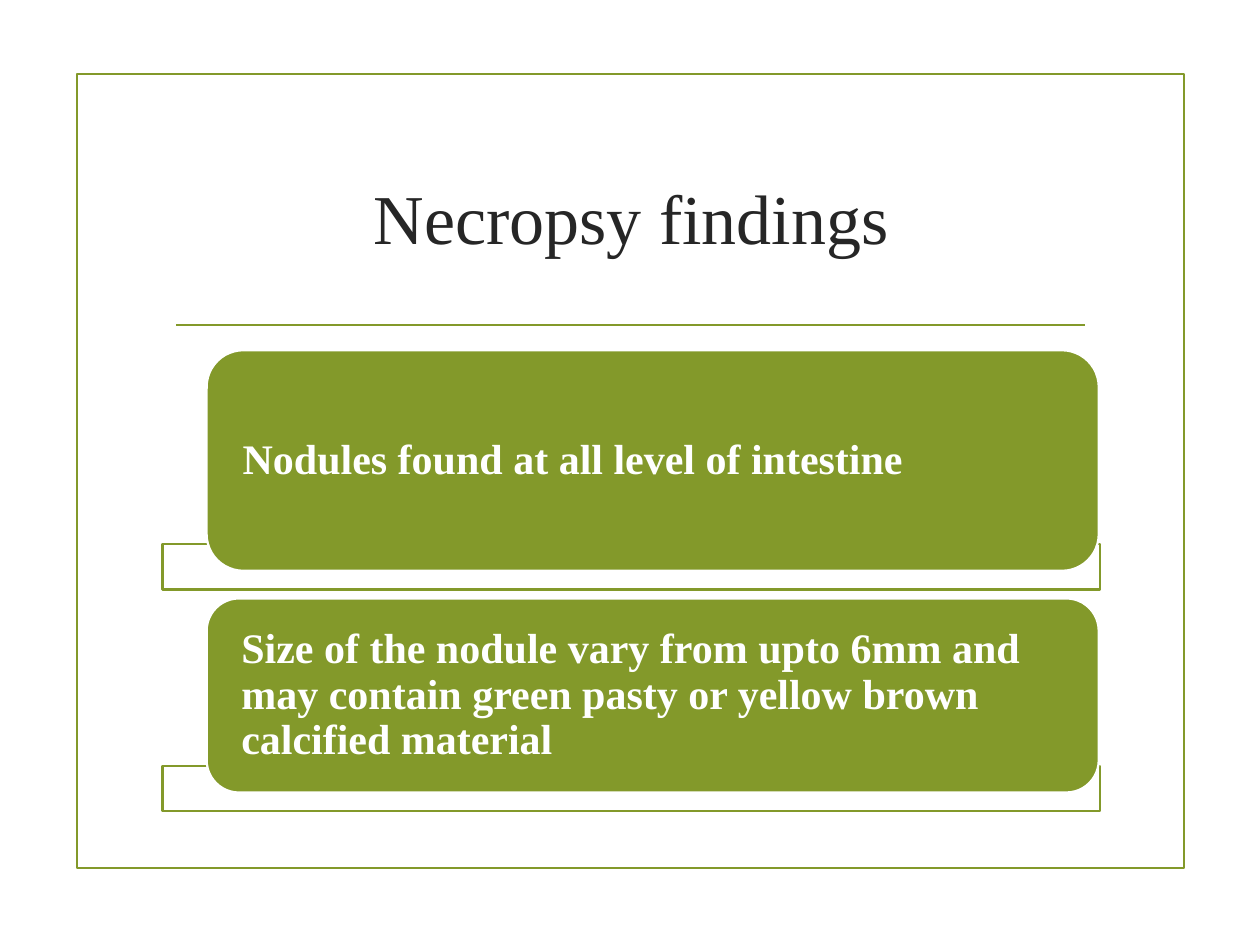
from lxml import etree
from pptx import Presentation
from pptx.dml.color import RGBColor
from pptx.enum import shapes, text
from pptx.oxml.ns import qn
from pptx.util import Inches, Pt

GREEN, WHITE, DARK = "83992A", "FFFFFF", "262626"
FONT = "Times New Roman"


def color(hex_value):
    return RGBColor.from_string(hex_value)


def set_font(font, hex_value, **values):
    font.color.rgb = color(hex_value)
    for name, value in {"name": FONT, **values}.items():
        setattr(font, name, value)


def set_frame(tf, **values):
    for name, value in {"word_wrap": True,
                        "vertical_anchor": text.MSO_ANCHOR.MIDDLE, **values}.items():
        setattr(tf, name, value)


def add_box(s, kind, box, fill, line):
    sp = s.shapes.add_shape(kind, *map(Inches, box))
    sp.shadow.inherit = False
    if fill:
        sp.fill.solid()
        sp.fill.fore_color.rgb = color(fill)
    else:
        sp.fill.background()
    sp.line.color.rgb = color(line)
    sp.line.width = Pt(1.25)
    return sp


def add_border(s, box):
    add_box(s, shapes.MSO_SHAPE.RECTANGLE, box, None, GREEN)


def add_heading(s, box, wording, rule):
    # Title
    title = s.shapes.title
    title.left, title.top, title.width, title.height = map(Inches, box)
    title.text = wording
    set_frame(title.text_frame)
    p = title.text_frame.paragraphs[0]
    p.alignment = text.PP_ALIGN.CENTER
    set_font(p.runs[0].font, DARK, size=Pt(40), bold=False)

    # Rule below the title
    left, right, y = map(Inches, rule)
    line = s.shapes.add_connector(shapes.MSO_CONNECTOR.STRAIGHT, left, y, right, y)
    line.line.color.rgb = color(GREEN)
    line.line.width = Pt(1.25)
    etree.SubElement(line._element.spPr, qn("a:effectLst"))


def add_finding(s, box, wording):
    left, top, width, height = box
    # Tray, overlapped by the lower edge of the card
    tray = add_box(s, shapes.MSO_SHAPE.RECTANGLE,
                   (left, top + height - 0.36, width, 0.36), WHITE, GREEN)
    rgb = tray.fill._xPr.find(".//" + qn("a:srgbClr"))
    etree.SubElement(rgb, qn("a:alpha"), val="90000")

    # Card
    card = add_box(s, shapes.MSO_SHAPE.ROUNDED_RECTANGLE,
                   (left + 0.35, top, width - 0.36, height - 0.15), GREEN, WHITE)
    tf = card.text_frame
    set_frame(tf, margin_left=Inches(0.2), margin_right=Inches(0.2),
              margin_top=0, margin_bottom=0)
    p = tf.paragraphs[0]
    p.alignment, p.line_spacing = text.PP_ALIGN.LEFT, 0.9
    r = p.add_run()
    r.text = wording
    set_font(r.font, WHITE, size=Pt(24), bold=True)


def main():
    prs = Presentation()
    prs.slide_width, prs.slide_height = Inches(10), Inches(7.5)
    s = prs.slides.add_slide(prs.slide_layouts[5])

    add_border(s, (0.61, 0.59, 8.79, 6.3))
    add_heading(s, (1.29, 1, 7.44, 1.43), "Necropsy findings", (1.4, 8.61, 2.58))

    findings = [
        (2.78, 1.9, "Nodules found at all level of intestine"),
        (4.75, 1.69, "Size of the nodule vary from upto 6mm and may contain "
                     "green pasty or yellow brown calcified material"),
    ]
    for top, height, wording in findings:
        add_finding(s, (1.29, top, 7.44, height), wording)

    prs.save("out.pptx")


if __name__ == "__main__":
    main()
